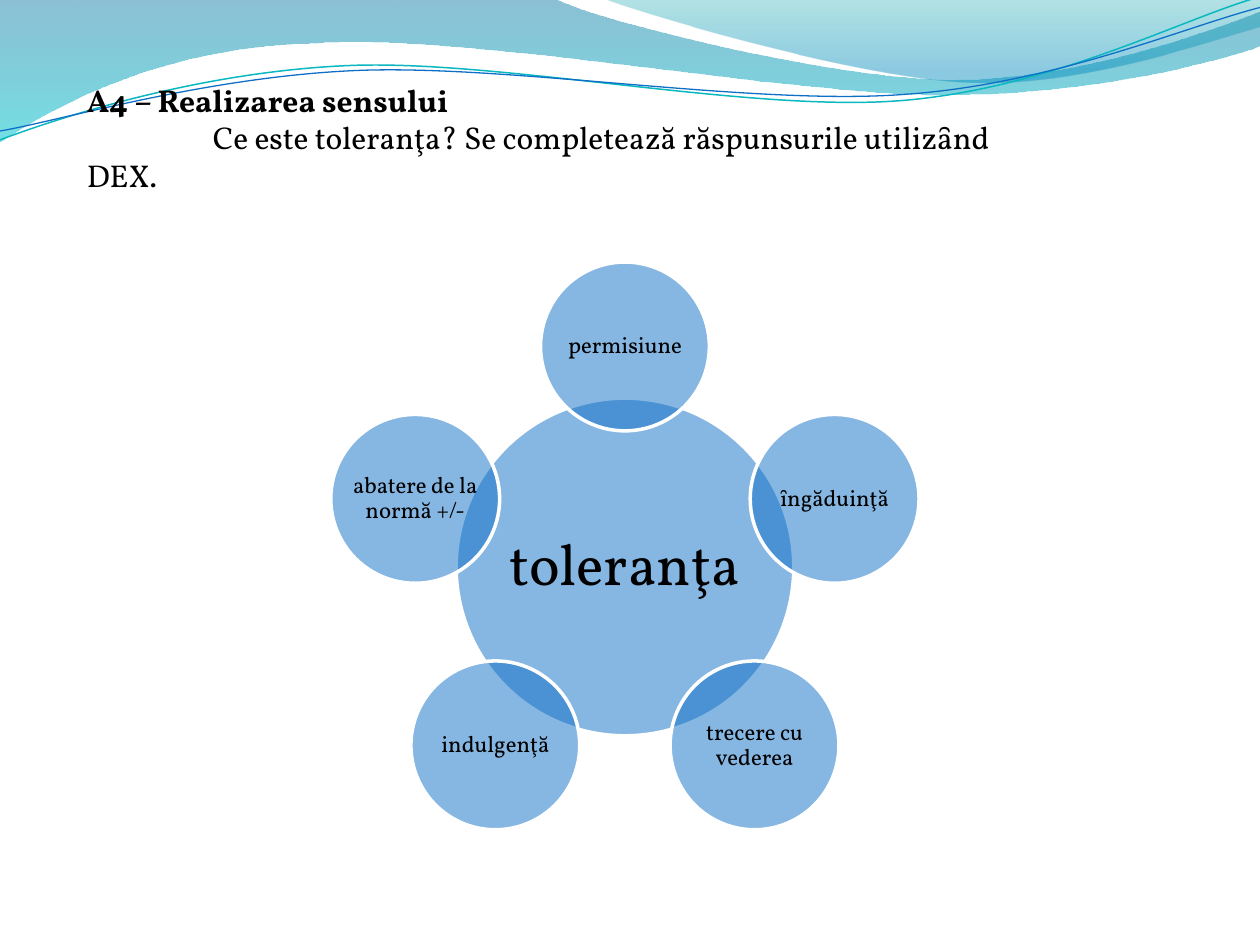
from dataclasses import dataclass
from itertools import chain
from math import cos, pi, radians, sin

from lxml import etree
from pptx import Presentation
from pptx.dml.color import RGBColor
from pptx.enum.shapes import MSO_SHAPE
from pptx.enum.text import MSO_ANCHOR, MSO_AUTO_SIZE, PP_ALIGN
from pptx.oxml.ns import qn
from pptx.util import Inches, Pt

OVAL = MSO_SHAPE.OVAL
MIDDLE = MSO_ANCHOR.MIDDLE
CENTER = PP_ALIGN.CENTER
GROW = MSO_AUTO_SIZE.SHAPE_TO_FIT_TEXT

FONT = "Vollkorn"
BLACK = RGBColor(0x00, 0x00, 0x00)
WHITE = RGBColor(0xFF, 0xFF, 0xFF)
BLUE = RGBColor(0x0F, 0x6F, 0xC6)
TEAL = RGBColor(0x0A, 0xB8, 0xBF)
DEEP_BLUE = RGBColor(0x00, 0x74, 0xA1)
AQUA = RGBColor(0x00, 0xC6, 0xCF)
SEA_GREEN = RGBColor(0x00, 0xA1, 0xA9)
SKY_BLUE = RGBColor(0x00, 0x8B, 0xBF)

SLIDE_W, SLIDE_H = Inches(10), Inches(7.5)
CELL = SLIDE_W / 10  # square grid: 10 columns by 7.5 rows

Point = tuple[float, float]


@dataclass(frozen=True)
class Stop:
    position: float
    color: RGBColor
    opacity: int


@dataclass(frozen=True)
class Wave:
    """Start point, then line steps (1 point) and cubic steps (3 points)."""
    start: Point
    steps: tuple[tuple[Point, ...], ...]


@dataclass(frozen=True)
class Band:
    wave: Wave
    stops: tuple[Stop, Stop]


@dataclass(frozen=True)
class Strand:
    wave: Wave
    pivot: Point
    color: RGBColor
    weight: float


@dataclass(frozen=True)
class Bubble:
    text: str
    center: Point
    radius: float
    size: int
    inset: float


BANDS = (
    Band(Wave((0, 0), (
        ((4.4, -0.01),),
        ((4.76, 0.17), (6.64, 0.63), (7.58, 0.63)),
        ((8.53, 0.63), (9.58, 0.26), (10, 0.09)),
        ((10.01, 0.36),),
        ((9.83, 0.44), (8.7, 0.76), (7.46, 0.75)),
        ((6.22, 0.75), (3.82, 0.28), (2.57, 0.34)),
        ((1.29, 0.36), (0.46, 0.83), (-0.01, 1.13)),
        ((0, 0),),
    )), (Stop(0, DEEP_BLUE, 45), Stop(1, AQUA, 55))),
    Band(Wave((4.79, -0.01), (
        ((5.09, 0.11), (6.82, 0.62), (7.69, 0.65)),
        ((8.56, 0.69), (9.61, 0.32), (10, 0.21)),
        ((10, 0),),
        ((4.79, -0.01),),
    )), (Stop(0, SEA_GREEN, 30), Stop(0.8, SKY_BLUE, 45))),
)

STRAND_TILT = -2.7
STRANDS = (
    Strand(Wave((0, 1.11), (
        ((0.48, 0.93), (1.58, 0.57), (2.77, 0.52)),
        ((3.95, 0.47), (5.93, 0.89), (7.13, 0.8)),
        ((8.33, 0.71), (9.38, 0.15), (9.98, -0.02)),
    )), (4.99, 0.58), TEAL, 0.85),
    Strand(Wave((0, 1.04), (
        ((0.47, 0.96), (1.64, 0.61), (2.83, 0.56)),
        ((4.03, 0.51), (5.97, 0.84), (7.17, 0.75)),
        ((8.36, 0.67), (9.41, 0.21), (10, 0.06)),
    )), (5, 0.59), BLUE, 0.75),
)

HUB = Bubble("toleranţa", (4.96, 4.5), 1.34, 33, 0.05)
ORBIT = 1.75
MEANINGS = ("permisiune", "ȋngăduinţă", "trecere cu vederea",
            "indulgenţă", "abatere de la normă +/-")


def grid(value: float) -> int:
    return round(value * CELL)


def turn(point: Point, pivot: Point, degrees: float) -> Point:
    angle = radians(degrees)
    dx, dy = point[0] - pivot[0], point[1] - pivot[1]
    return (pivot[0] + dx * cos(angle) - dy * sin(angle),
            pivot[1] + dx * sin(angle) + dy * cos(angle))


def add_wave(shapes, wave: Wave, close: bool):
    corners = [(grid(x), grid(y)) for x, y in chain(*wave.steps)]
    builder = shapes.build_freeform(*(grid(v) for v in wave.start))
    builder.add_line_segments(corners, close=close)
    outline = builder.convert_to_shape()
    outline.shadow.inherit = False
    # Join the three points of each cubic step into one curve
    lines = iter(list(outline._element.spPr.iter(qn("a:lnTo"))))
    for step in wave.steps:
        parts = [next(lines) for _ in step]
        if len(step) == 3:
            curve = etree.Element(qn("a:cubicBezTo"))
            parts[0].addprevious(curve)
            for part in parts:
                curve.append(part[0])
                part.getparent().remove(part)
    return outline


def set_opacity(color_element, percent: int) -> None:
    alpha = etree.SubElement(color_element, qn("a:alpha"))
    alpha.set("val", str(percent * 1000))


def add_band(shapes, band: Band) -> None:
    outline = add_wave(shapes, band.wave, close=True)
    outline.line.fill.background()
    outline.fill.gradient()
    outline.fill.gradient_angle = 270
    for target, stop in zip(outline.fill.gradient_stops, band.stops):
        target.position = stop.position
        target.color.rgb = stop.color
    colors = outline._element.spPr.iter(qn("a:srgbClr"))
    for color, stop in zip(list(colors), band.stops):
        set_opacity(color, stop.opacity)


def add_strand(shapes, strand: Strand) -> None:
    def level(point: Point) -> Point:
        return turn(point, strand.pivot, -STRAND_TILT)

    steps = tuple(tuple(map(level, step)) for step in strand.wave.steps)
    outline = add_wave(shapes, Wave(level(strand.wave.start), steps), close=False)
    outline.rotation = STRAND_TILT
    outline.fill.background()
    outline.line.color.rgb = strand.color
    outline.line.width = Pt(strand.weight)


def add_run(paragraph, text: str, size: int, bold: bool = False) -> None:
    run = paragraph.add_run()
    run.text = text
    run.font.name = FONT
    run.font.size = Pt(size)
    run.font.bold = bold
    run.font.color.rgb = BLACK


def add_heading(shapes) -> None:
    box = shapes.add_textbox(grid(0.59), grid(0.59), grid(7.52), grid(1.01))
    frame = box.text_frame
    frame.word_wrap = True
    frame.auto_size = GROW
    add_run(frame.paragraphs[0], "A4 – Realizarea sensului", 18, bold=True)
    question = frame.add_paragraph()
    add_run(question,
            "\tCe este toleranţa? Se completează răspunsurile utilizȃnd DEX.", 18)
    # Tab stop one column in
    tabs = etree.SubElement(question._p.get_or_add_pPr(), qn("a:tabLst"))
    etree.SubElement(tabs, qn("a:tab"), pos=str(grid(1)), algn="l")


def add_bubble(shapes, bubble: Bubble) -> None:
    left, top = (grid(c - bubble.radius) for c in bubble.center)
    side = grid(2 * bubble.radius)
    disc = shapes.add_shape(OVAL, left, top, side, side)
    disc.shadow.inherit = False
    disc.fill.solid()
    disc.fill.fore_color.rgb = BLUE
    set_opacity(disc._element.spPr.find(qn("a:solidFill"))[0], 50)
    disc.line.color.rgb = WHITE
    disc.line.width = Pt(2)
    # The label spans the full square around the disc
    frame = shapes.add_textbox(left, top, side, side).text_frame
    frame.word_wrap = True
    frame.vertical_anchor = MIDDLE
    frame.margin_left = frame.margin_right = grid(bubble.inset)
    frame.margin_top = frame.margin_bottom = grid(bubble.inset)
    paragraph = frame.paragraphs[0]
    paragraph.alignment = CENTER
    paragraph.line_spacing = 0.9
    add_run(paragraph, bubble.text, bubble.size)


def main() -> None:
    deck = Presentation()
    deck.slide_width, deck.slide_height = SLIDE_W, SLIDE_H
    shapes = deck.slides.add_slide(deck.slide_layouts[6]).shapes
    # Wave decoration along the top
    for band in BANDS:
        add_band(shapes, band)
    for strand in STRANDS:
        add_strand(shapes, strand)
    add_heading(shapes)
    # Hub with its meanings clockwise from the top
    add_bubble(shapes, HUB)
    for i, meaning in enumerate(MEANINGS):
        angle = 2 * pi * i / len(MEANINGS)
        center = (HUB.center[0] + ORBIT * sin(angle),
                  HUB.center[1] - ORBIT * cos(angle))
        add_bubble(shapes, Bubble(meaning, center, HUB.radius / 2, 13, 0.02))
    deck.save("out.pptx")


if __name__ == "__main__":
    main()
